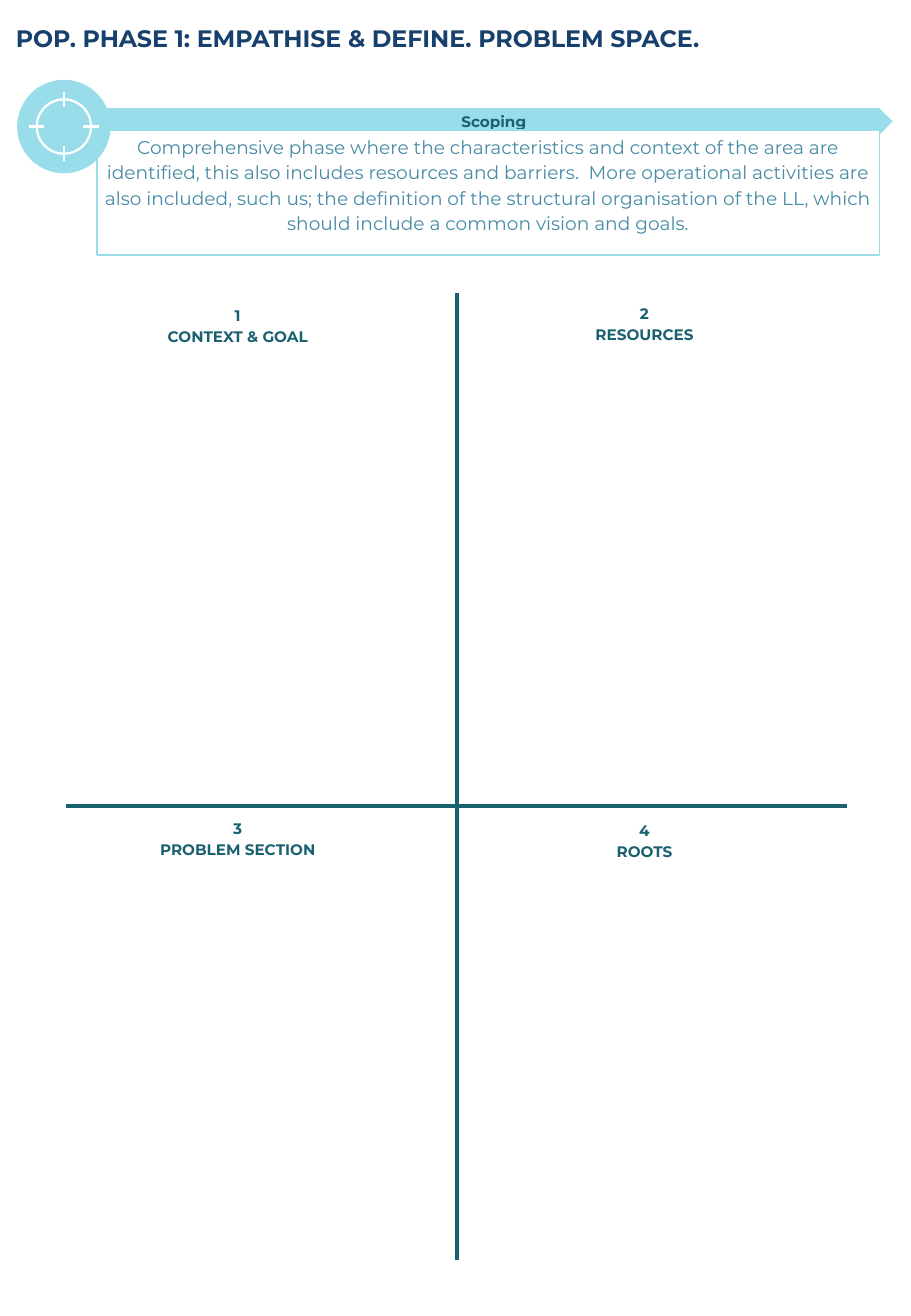
"""Build the problem space canvas: a scoping banner above four numbered quadrants."""
from lxml import etree
from pptx import Presentation
from pptx.dml.color import RGBColor
from pptx.enum.shapes import MSO_CONNECTOR, MSO_SHAPE
from pptx.enum.text import MSO_ANCHOR, PP_ALIGN
from pptx.oxml.ns import qn
from pptx.util import Pt

LINE = MSO_CONNECTOR.STRAIGHT
OVAL, RECT, ARROW = MSO_SHAPE.OVAL, MSO_SHAPE.RECTANGLE, MSO_SHAPE.CHEVRON
TOP, MIDDLE = MSO_ANCHOR.TOP, MSO_ANCHOR.MIDDLE
LEFT, CENTER = PP_ALIGN.LEFT, PP_ALIGN.CENTER

COLORS = {"navy": "17406D", "teal": "19616F", "blue": "488BA6",
          "sky": "99DDEB", "white": "FFFFFF"}
HEX = {name: RGBColor.from_string(code) for name, code in COLORS.items()}
INSET = (4.3, 1.4, 4.3, 2.2)

deck = Presentation()
deck.slide_width, deck.slide_height = Pt(540), Pt(779.76)
slide = deck.slides.add_slide(deck.slide_layouts[6])
shapes = slide.shapes


def write(shape, lines, size, color, bold=True, align=CENTER,
          gap=1.15, inset=INSET, anchor=TOP):
    frame = shape.text_frame
    frame.word_wrap = True
    frame.vertical_anchor = anchor
    frame.margin_left, frame.margin_top, frame.margin_right, frame.margin_bottom = map(Pt, inset)
    for i, line in enumerate(lines):
        para = frame.add_paragraph() if i else frame.paragraphs[0]
        para.alignment, para.line_spacing = align, gap
        run = para.add_run()
        run.text = line
        font = run.font
        font.name, font.size, font.bold = "Montserrat", Pt(size), bold
        font.color.rgb = HEX[color]


def rule(x1, y1, x2, y2, color, width):
    line = shapes.add_connector(LINE, Pt(x1), Pt(y1), Pt(x2), Pt(y2))
    line.line.color.rgb, line.line.width = HEX[color], Pt(width)
    etree.SubElement(line._element.spPr, qn("a:effectLst"))


banner = shapes.add_shape(ARROW, Pt(56.2), Pt(64.1), Pt(473), Pt(15.8))
banner.shadow.inherit = False
banner.fill.solid()
banner.fill.fore_color.rgb = HEX["sky"]
banner.line.fill.background()
write(banner, ["Scoping"], 9, "teal", gap=1, inset=(7.2, 3.6, 7.2, 3.6), anchor=MIDDLE)

panel = shapes.add_shape(RECT, Pt(57.6), Pt(77), Pt(463.7), Pt(74.2))
panel.shadow.inherit = False
panel.fill.solid()
panel.fill.fore_color.rgb = HEX["white"]
panel.line.color.rgb, panel.line.width = HEX["sky"], Pt(1)
about = ("Comprehensive phase where the characteristics and context of the area are "
         "identified, this also includes resources and barriers.  More operational "
         "activities are also included, such us; the definition of the structural "
         "organisation of the LL, which should include a common vision and goals.")
write(panel, [about], 11, "blue", bold=False)

title = shapes.add_textbox(Pt(9.4), Pt(12.2), Pt(520), Pt(39.6))
write(title, ["POP. PHASE 1: EMPATHISE & DEFINE. PROBLEM SPACE."], 14.1, "navy",
      align=LEFT, gap=1.1, inset=(0, 0, 0, 0))

mid_x, mid_y = 37.9, 75
for radius, edge in ((27.7, None), (16.1, "white")):
    disc = shapes.add_shape(OVAL, Pt(mid_x - radius), Pt(mid_y - radius),
                            Pt(2 * radius), Pt(2 * radius))
    disc.shadow.inherit = False
    disc.fill.solid()
    disc.fill.fore_color.rgb = HEX["sky"]
    if edge:
        disc.line.color.rgb, disc.line.width = HEX[edge], Pt(1.3)
    else:
        disc.line.fill.background()
for dx, dy in ((1, 0), (-1, 0), (0, 1), (0, -1)):
    rule(mid_x + 11.6 * dx, mid_y + 11.6 * dy,
         mid_x + 20.6 * dx, mid_y + 20.6 * dy, "white", 1.3)

parts = (("CONTEXT & GOAL", 77.8, 178.6), ("RESOURCES", 319, 177.1),
         ("PROBLEM SECTION", 77.8, 482.4), ("ROOTS", 319, 483.8))
for num, (name, x, y) in enumerate(parts, 1):
    label = shapes.add_textbox(Pt(x), Pt(y), Pt(126), Pt(27.4))
    write(label, [str(num), name], 9, "teal")

rule(38.9, 477.4, 501.8, 477.4, "teal", 2.25)
rule(270.7, 173.5, 270.7, 746.6, "teal", 2.25)

deck.save("out.pptx")
